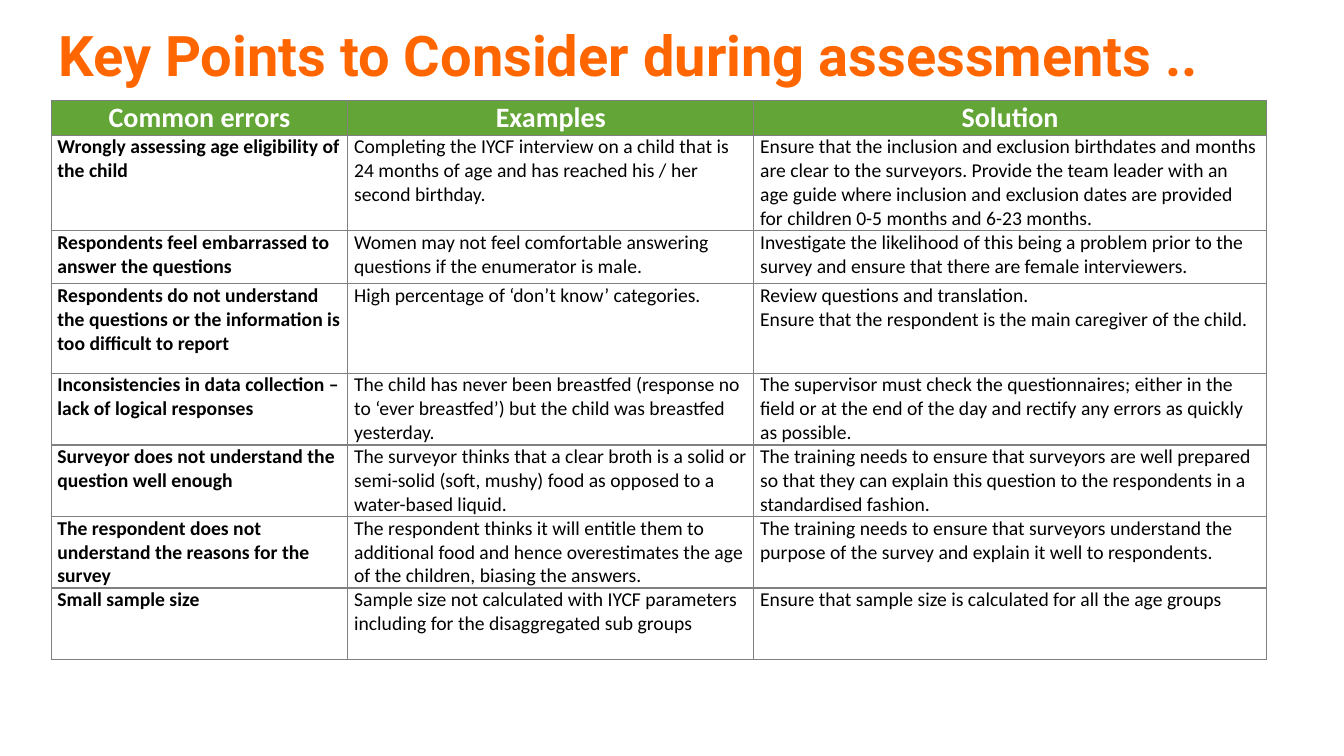
import pptx
import pptx.dml.color
import pptx.enum.text
import pptx.oxml
import pptx.oxml.ns
import pptx.util

Pt = pptx.util.Pt
Align = pptx.enum.text.PP_ALIGN
Anchor = pptx.enum.text.MSO_ANCHOR

HEADINGS = ["Common errors", "Examples", "Solution"]
ERRORS = [
    ["Wrongly assessing age eligibility of the child",
     "Completing the IYCF interview on a child that is 24 months of age and has reached his / her second birthday.",
     "Ensure that the inclusion and exclusion birthdates and months are clear to the surveyors. Provide the team "
     "leader with an age guide where inclusion and exclusion dates are provided for children 0-5 months and "
     "6-23 months."],
    ["Respondents feel embarrassed to answer the questions",
     "Women may not feel comfortable answering questions if the enumerator is male.",
     "Investigate the likelihood of this being a problem prior to the survey and ensure that there are female "
     "interviewers."],
    ["Respondents do not understand the questions or the information is too difficult to report",
     "High percentage of ‘don’t know’ categories.",
     "Review questions and translation.\nEnsure that the respondent is the main caregiver of the child."],
    ["Inconsistencies in data collection – lack of logical responses",
     "The child has never been breastfed (response no to ‘ever breastfed’) but the child was breastfed yesterday.",
     "The supervisor must check the questionnaires; either in the field or at the end of the day and rectify any "
     "errors as quickly as possible."],
    ["Surveyor does not understand the question well enough",
     "The surveyor thinks that a clear broth is a solid or semi-solid (soft, mushy) food as opposed to a "
     "water-based liquid.",
     "The training needs to ensure that surveyors are well prepared so that they can explain this question to the "
     "respondents in a standardised fashion."],
    ["The respondent does not understand the reasons for the survey",
     "The respondent thinks it will entitle them to additional food and hence overestimates the age of the "
     "children, biasing the answers.",
     "The training needs to ensure that surveyors understand the purpose of the survey and explain it well to "
     "respondents."],
    ["Small sample size",
     "Sample size not calculated with IYCF parameters including for the disaggregated sub groups",
     "Ensure that sample size is calculated for all the age groups"],
]
COLUMN_WIDTHS = [212, 290, 366]
ROW_HEIGHTS = [24, 67, 38, 64, 51, 51, 51, 51]


def colour(value):
    return pptx.dml.color.RGBColor.from_string(value)


def assign(target, values):
    for name, value in values.items():
        setattr(target, name, value)


class SlideBuilder:
    """Holds the style and the current slide and adds each kind of element."""

    title_font = {"name": "Roboto", "size": Pt(40), "bold": True}
    heading_font = {"name": "Calibri", "size": Pt(20), "bold": True}
    cell_font = {"name": "Calibri", "size": Pt(14)}
    cell_margins = {"margin_left": Pt(4.5), "margin_right": Pt(4.5), "margin_top": 0, "margin_bottom": 0}
    orange, green, grey, white, black = "FF6600", "63A537", "808080", "FFFFFF", "000000"

    def __init__(self, deck):
        self.page = deck.slides.add_slide(deck.slide_layouts[5])

    def set_text(self, frame, text, font, ink, align, spacing=None):
        frame.text = text
        for para in frame.paragraphs:
            assign(para, {"alignment": align, "line_spacing": spacing})
            for span in para.runs:
                assign(span.font, font)
                span.font.color.rgb = colour(ink)

    def title(self, text, left, top, width, height):
        box = self.page.shapes.title
        assign(box, {"left": Pt(left), "top": Pt(top), "width": Pt(width), "height": Pt(height)})
        assign(box.text_frame, {"word_wrap": True, "vertical_anchor": Anchor.MIDDLE,
                                "auto_size": pptx.enum.text.MSO_AUTO_SIZE.NONE})
        self.set_text(box.text_frame, text, self.title_font, self.orange, Align.LEFT, 0.9)

    def border(self, cell):
        properties = cell._tc.get_or_add_tcPr()
        for side in ("lnL", "lnR", "lnT", "lnB"):
            properties.append(pptx.oxml.parse_xml(
                f'<a:{side} {pptx.oxml.ns.nsdecls("a")} w="{Pt(1)}"><a:solidFill>'
                f'<a:srgbClr val="{self.grey}"/></a:solidFill></a:{side}>'))

    def cell(self, cell, text, heading, bold):
        assign(cell, {**self.cell_margins, "vertical_anchor": Anchor.TOP})
        self.border(cell)
        if heading:
            cell.fill.solid()
            cell.fill.fore_color.rgb = colour(self.green)
            self.set_text(cell.text_frame, text, self.heading_font, self.white, Align.CENTER)
        else:
            cell.fill.background()
            self.set_text(cell.text_frame, text, {**self.cell_font, "bold": bold}, self.black, Align.LEFT)

    def table(self, rows, widths, heights, left, top):
        table = self.page.shapes.add_table(len(rows), len(widths), Pt(left), Pt(top),
                                           Pt(sum(widths)), Pt(sum(heights))).table
        table.horz_banding = False
        for column, width in zip(table.columns, widths):
            column.width = Pt(width)
        for row, height, texts in zip(table.rows, heights, rows):
            row.height = Pt(height)
            for number, (cell, text) in enumerate(zip(row.cells, texts)):
                self.cell(cell, text, texts is HEADINGS, number == 0)


def main():
    deck = pptx.Presentation()
    assign(deck, {"slide_width": Pt(960), "slide_height": Pt(540)})
    builder = SlideBuilder(deck)
    builder.title("Key Points to Consider during assessments ..", 34.5, 11.5, 894, 60.5)
    builder.table([HEADINGS] + ERRORS, COLUMN_WIDTHS, ROW_HEIGHTS, 36.5, 72)
    deck.save("out.pptx")


if __name__ == "__main__":
    main()
